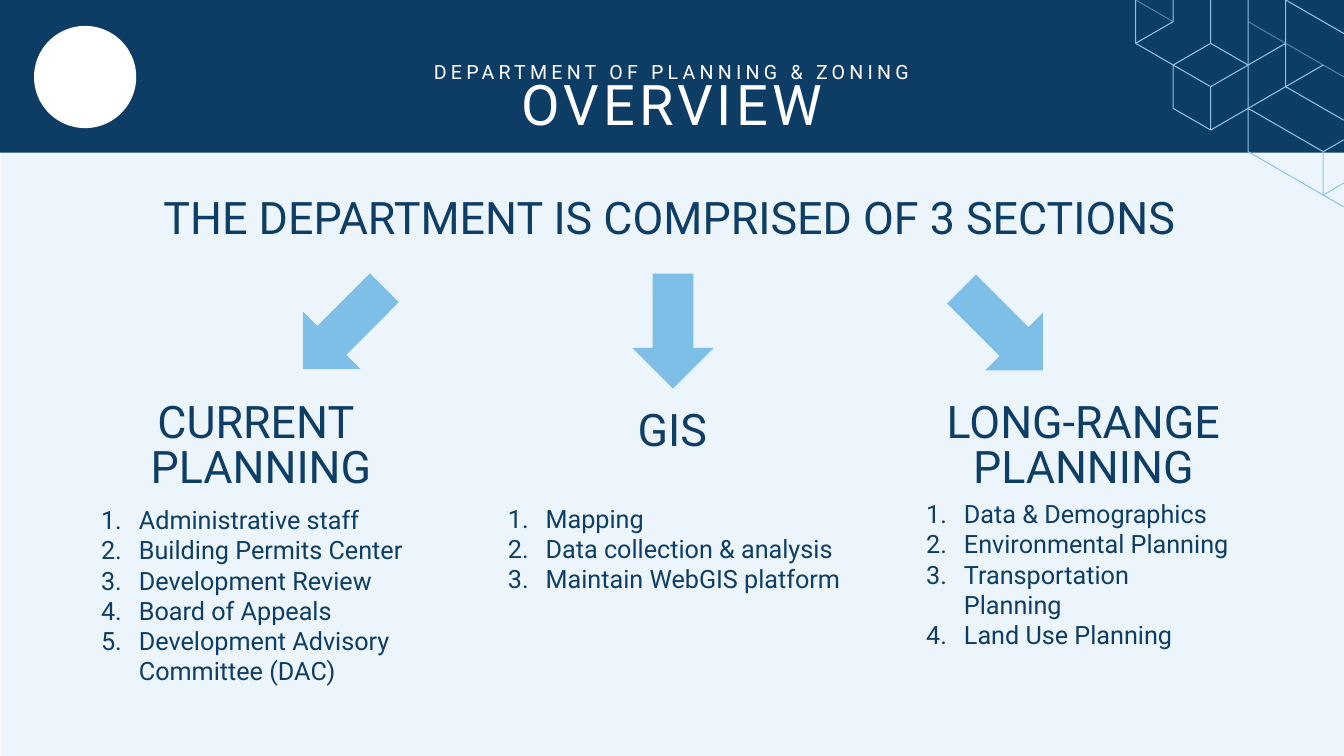
"""Builds the overview slide of the Department of Planning & Zoning."""
import pptx
import pptx.dml.color
import pptx.enum.shapes
import pptx.enum.text
import pptx.oxml.ns
import pptx.util
from lxml import etree

Pt = pptx.util.Pt
SHAPES = pptx.enum.shapes.MSO_SHAPE
ALIGN = pptx.enum.text.PP_ALIGN

NAVY, INK, SKY, LATTICE, WHITE = "0D3D65", "0E3D66", "7DBFE6", "8DC5E6", "FFFFFF"
SUBTITLE = "DEPARTMENT OF PLANNING & ZONING"
TITLE = "OVERVIEW"
STATEMENT = "THE DEPARTMENT IS COMPRISED OF 3 SECTIONS"
SECTIONS = [
    {
        "heading": "CURRENT \vPLANNING", "heading_box": (0, 284, 373, 72.7), "spacing": 32,
        "items": ["Administrative staff", "Building Permits Center", "Development Review",
                  "Board of Appeals", "Development Advisory Committee (DAC)"],
        "items_box": (65.1, 356.8, 229.7, 138.2),
        "arrow": (216.4, 193.6), "rotation": 45,
    },
    {
        "heading": "GIS", "heading_box": (373, 283.4, 214.5, 46), "spacing": None,
        "items": ["Mapping", "Data collection & analysis", "Maintain WebGIS platform"],
        "items_box": (355.7, 355.7, 252, 72.7),
        "arrow": (451.6, 195.4), "rotation": 0,
    },
    {
        "heading": "LONG-RANGE PLANNING", "heading_box": (587.4, 284, 373, 72.7), "spacing": 32,
        "items": ["Data & Demographics", "Environmental Planning",
                  "Transportation Planning", "Land Use Planning"],
        "items_box": (654.5, 352.4, 232.6, 94.3),
        "arrow": (686.8, 194.4), "rotation": 315,
    },
]
ARROW_SIZE = (58.2, 82.2)

LATTICE_LEFT, LATTICE_TOP, COLUMN, ROW = 811.2, 0, 26.8, 15.48
EDGE = 5.55
CUBES = [
    [(2, 0), (2, 2), (1, 3), (1, 5), (2, 6), (3, 5), (3, 0)],
    [(1, 3), (2, 4), (2, 6)],
    [(2, 2), (3, 3), (4, 2), (4, 0)],
]
TOP_EDGES = [
    [(0, 0), (0, 2), (1, 1), (1, 0)],
    [(0, 2), (1, 3)],
    [(4, 0), (EDGE, 1.55)],
]
LOWER_CUBES = [
    [(4, 2), (4, 4), (3, 5), (3, 7), (EDGE, 9.55)],
    [(3, 5), (5, 7), (5, 9), (EDGE, 8.45)],
    [(5, 3), (4, 4), (EDGE, 5.55)],
    [(5, 7), (EDGE, 6.45)],
    [(2, 4), (3, 3)],
]
LATTICE_PARTS = [
    (CUBES, 100),
    ([[(3, 1), (EDGE, 3.55)]], 50),
    (TOP_EDGES, 100),
    ([[(0, 0), (1, 1)]], 50),
    (LOWER_CUBES, 100),
]

presentation = pptx.Presentation()
presentation.slide_width, presentation.slide_height = Pt(960), Pt(540)
slide = presentation.slides.add_slide(presentation.slide_layouts[6])


def paint(color_format, color, opacity=100):
    color_format.rgb = pptx.dml.color.RGBColor.from_string(color)
    if opacity < 100:
        element = color_format._xFill.find(pptx.oxml.ns.qn("a:srgbClr"))
        etree.SubElement(element, pptx.oxml.ns.qn("a:alpha"), val=str(opacity * 1000))


def add_block(kind, box, color, opacity=100, rotation=0):
    shape = slide.shapes.add_shape(kind, *map(Pt, box))
    shape.shadow.inherit = False
    shape.fill.solid()
    paint(shape.fill.fore_color, color, opacity)
    shape.line.fill.background()
    shape.rotation = rotation


def add_text(text, box, size, color=INK, align=ALIGN.CENTER, spacing=None,
             tracking=0, numbered=False):
    frame = slide.shapes.add_textbox(*map(Pt, box)).text_frame
    frame.word_wrap = True
    frame.auto_size = pptx.enum.text.MSO_AUTO_SIZE.SHAPE_TO_FIT_TEXT
    frame.text = text
    for paragraph in frame.paragraphs:
        paragraph.alignment = align
        if spacing:
            paragraph.line_spacing = Pt(spacing)
        if numbered:
            properties = paragraph._p.get_or_add_pPr()
            properties.set("marL", str(Pt(27)))
            properties.set("indent", str(-Pt(27)))
            etree.SubElement(properties, pptx.oxml.ns.qn("a:buAutoNum"), type="arabicPeriod")
        for run in paragraph.runs:
            run.font.name, run.font.size = "Roboto", Pt(size)
            paint(run.font.color, color)
            if tracking:
                run.font._element.set("spc", str(tracking * 100))


def lattice_point(point):
    column, row = point
    return Pt(LATTICE_LEFT + column * COLUMN), Pt(LATTICE_TOP + row * ROW)


def add_lattice(strokes, opacity):
    builder = slide.shapes.build_freeform(*lattice_point(strokes[0][0]))
    for index, stroke in enumerate(strokes):
        start, *others = map(lattice_point, stroke)
        if index:
            builder.move_to(*start)
        builder.add_line_segments(others, close=False)
    shape = builder.convert_to_shape()
    shape.shadow.inherit = False
    shape.fill.background()
    shape.line.width = Pt(0.75)
    shape.line.fill.solid()
    paint(shape.line.fill.fore_color, LATTICE, opacity)


add_block(SHAPES.RECTANGLE, (0.7, 0, 959.3, 540), SKY, opacity=15)
add_block(SHAPES.RECTANGLE, (0, 0, 960, 109), NAVY)
add_block(SHAPES.OVAL, (24.3, 18.5, 73, 73), WHITE)
for strokes, opacity in LATTICE_PARTS:
    add_lattice(strokes, opacity)
add_text(SUBTITLE, (84.7, -4.3, 790, 57), 14, color=WHITE, spacing=60, tracking=3)
add_text(TITLE, (0.7, 33.8, 958.3, 67.2), 40, color=WHITE, spacing=60, tracking=3)
add_text(STATEMENT, (53.3, 131.8, 850.3, 46), 32)

for section in SECTIONS:
    add_block(SHAPES.DOWN_ARROW, section["arrow"] + ARROW_SIZE, SKY, rotation=section["rotation"])
    add_text(section["heading"], section["heading_box"], 32, spacing=section["spacing"])
    add_text("\n".join(section["items"]), section["items_box"], 18,
             align=ALIGN.LEFT, numbered=True)

presentation.save("out.pptx")
